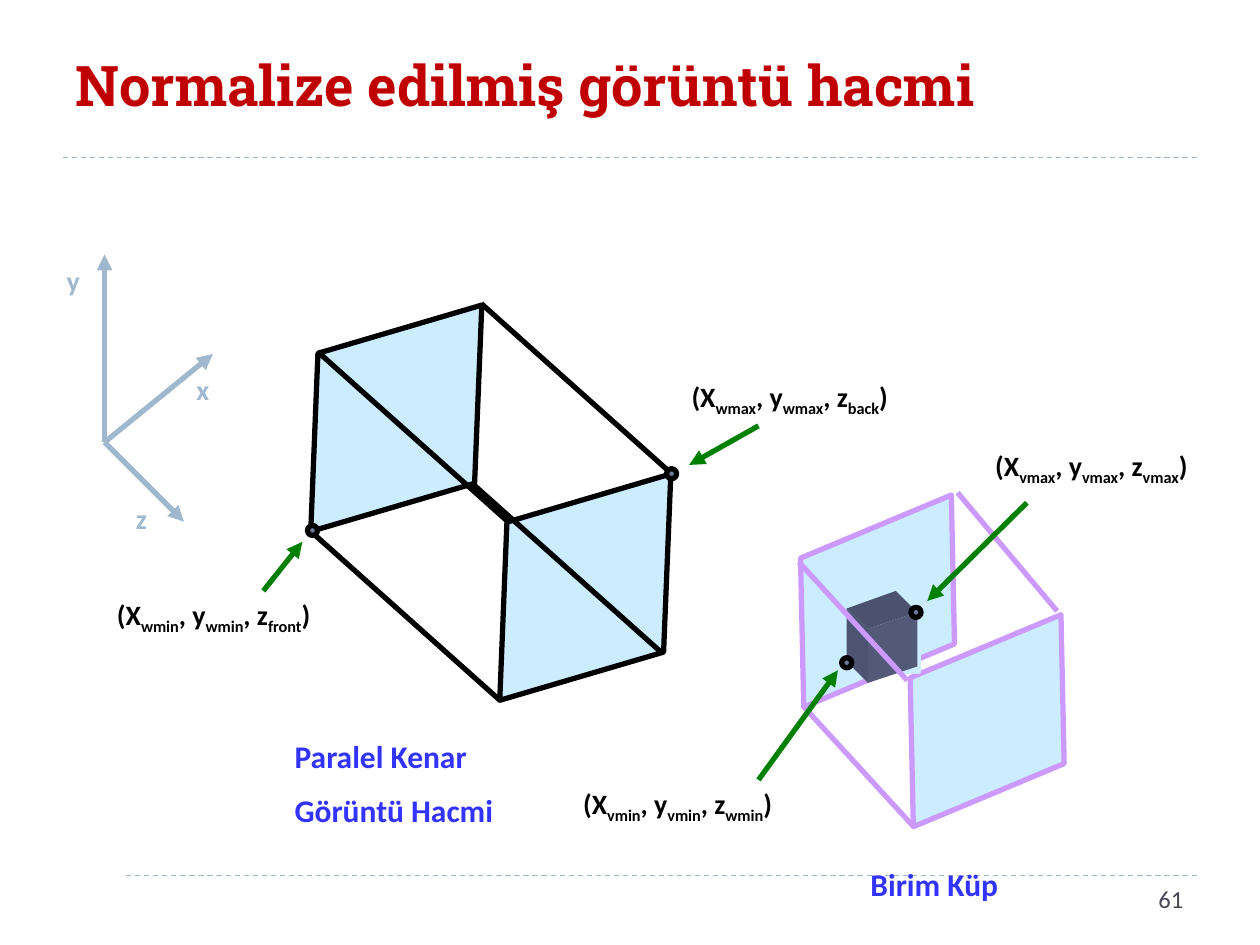
from pptx import Presentation
from pptx.dml.color import RGBColor
from pptx.enum.dml import MSO_LINE
from pptx.enum.shapes import MSO_CONNECTOR, MSO_SHAPE
from pptx.enum.text import MSO_ANCHOR, MSO_AUTO_SIZE, PP_ALIGN
from pptx.oxml.ns import qn
from pptx.util import Inches, Pt
from lxml.etree import SubElement

TITLE = "Normalize edilmiş görüntü hacmi"
STEEL, BLACK, GREEN, LILAC = "9FB8CD", "000000", "008000", "CC99FF"
SKY, SLATE, BLUE, WHITE = "CCECFF", "727CA3", "3333FF", "FFFFFF"

ROOT = (0.83, 3.51)
AXES = [
    ("y", (0.83, 2.02), (0.43, 2.04)),
    ("z", (1.46, 4.14), (0.98, 3.93)),
    ("x", (1.69, 2.81), (1.46, 2.91)),
]
POINTS = [
    ("(X_wmin_, y_wmin_, z_front_)", (0.83, 4.69), (2.09, 4.69), (2.4, 4.3), (2.48, 4.21)),
    ("(X_wmax_, y_wmax_, z_back_)", (5.39, 2.96), (6.02, 3.38), (5.47, 3.69), (5.33, 3.76)),
    ("(X_vmin_, y_vmin_, z_wmin_)", (4.53, 6.19), (6.02, 6.19), (6.65, 5.32), (6.72, 5.26)),
    ("(X_vmax_, y_vmax_, z_vmax_)", (7.8, 3.51), (8.15, 3.99), (7.36, 4.77), (7.27, 4.86)),
]
NAMES = [
    (["Birim Küp"], (6.81, 6.82, 1.42, 0.4)),
    (["Paralel Kenar", "Görüntü Hacmi"], (2.24, 5.8, 2.36, 0.85)),
]
BIG = [(3.74, 3.99), (2.24, 2.65)]
SMALL = [(6.1, 4.22), (6.97, 5.17)]
SHIFT = (1.5, 1.34)
EDGES = [(2.52, 2.79), (3.82, 2.41), (3.74, 3.83), (2.47, 4.22)]
BACK = [((7.6, 3.91), (8.39, 4.85)), ((6.38, 5.61), (7.25, 6.56))]
NEAR = ((6.34, 4.46), (7.2, 5.4))
CUBE = [
    ("4A526F", [(6.72, 4.83), (7.11, 4.69), (7.28, 4.86), (6.89, 4.99)]),
    ("4C5472", [(6.72, 4.83), (6.89, 4.99), (6.89, 5.42), (6.72, 5.25)]),
    ("525A78", [(6.89, 4.99), (7.28, 4.86), (7.28, 5.29), (6.89, 5.42)]),
]

deck = Presentation()
deck.slide_width, deck.slide_height = Inches(10), Inches(7.5)
slide = deck.slides.add_slide(deck.slide_layouts[5])
shapes = slide.shapes


def color(code):
    return RGBColor.from_string(code)


def paint(shape, fill, edge=None):
    shape.shadow.inherit = False
    shape.fill.solid()
    shape.fill.fore_color.rgb = color(fill)
    if edge:
        shape.line.color.rgb = color(edge)
        shape.line.width = Pt(3)
    else:
        shape.line.fill.background()
    return shape


def block(kind, box, fill, edge=None):
    return paint(shapes.add_shape(kind, *map(Inches, box)), fill, edge)


def line(start, end, code, width=3, arrow=False, dash=False):
    rule = shapes.add_connector(MSO_CONNECTOR.STRAIGHT, *map(Inches, start + end))
    rule.line.color.rgb = color(code)
    rule.line.width = Pt(width)
    if dash:
        rule.line.dash_style = MSO_LINE.DASH
    if arrow:
        SubElement(rule.line._get_or_add_ln(), qn("a:tailEnd"), type="triangle")
    SubElement(rule._element.spPr, qn("a:effectLst"))


def style(para, size, code, bold=True, name="Calibri"):
    font = para.font
    font.name, font.size, font.bold = name, Pt(size), bold
    font.color.rgb = color(code)


def text(rows, box, size, code):
    frame = shapes.add_textbox(*map(Inches, box)).text_frame
    frame.word_wrap = True
    for n, row in enumerate(rows):
        para = frame.add_paragraph() if n else frame.paragraphs[0]
        if n:
            para.space_before = Pt(size / 2)
        style(para, size, code)
        for i, part in enumerate(row.split("_")):
            run = para.add_run()
            run.text = part
            if i % 2:
                run._r.get_or_add_rPr().set("baseline", "-25000")


def faces(spots, size, turn, slant, edge):
    for spot in spots:
        face = block(MSO_SHAPE.PARALLELOGRAM, spot + size, SKY, edge)
        face.adjustments[0] = slant
        face.rotation = turn


for y in (6.95, 1.25):
    line((0.5, y), (9.5, y), STEEL, 0.75, dash=True)
block(MSO_SHAPE.RECTANGLE, (0.35, 6.82, 0.63, 0.63), WHITE)
page = block(MSO_SHAPE.RECTANGLE, (7.15, 6.97, 2.34, 0.4), WHITE).text_frame
page.text = "61"
page.vertical_anchor = MSO_ANCHOR.TOP
page.paragraphs[0].alignment = PP_ALIGN.RIGHT
style(page.paragraphs[0], 14, "464653", False)

title = shapes.title
title.left, title.top, title.width, title.height = map(Inches, (0.5, 0.13, 9, 1.08))
head = title.text_frame
head.text = TITLE
head.auto_size = MSO_AUTO_SIZE.NONE
head.vertical_anchor = MSO_ANCHOR.MIDDLE
head.paragraphs[0].alignment = PP_ALIGN.LEFT
style(head.paragraphs[0], 32, "C00000", name="Roboto Slab")

for name, tip, spot in AXES:
    line(ROOT, tip, STEEL, arrow=True)
    text([name], spot + (0.6, 0.37), 16, STEEL)

faces(BIG, (1.81, 1.34), 343.6, 0.339, BLACK)
for x, y in EDGES:
    line((x, y), (x + SHIFT[0], y + SHIFT[1]), BLACK)

faces(SMALL, (1.73, 1.1), 337.3, 0.393, LILAC)
block(MSO_SHAPE.RECTANGLE, (7.05, 5.17, 0.24, 0.16), SKY, SKY)
for start, end in BACK:
    line(start, end, LILAC)
for code, spots in CUBE:
    first, *rest = [(Inches(x), Inches(y)) for x, y in spots]
    pen = shapes.build_freeform(*first)
    pen.add_line_segments(rest)
    paint(pen.convert_to_shape(), code)
line(*NEAR, LILAC)

for label, spot, start, end, (x, y) in POINTS:
    text([label], spot + (2.2, 0.37), 16, BLACK)
    block(MSO_SHAPE.OVAL, (x - 0.04, y - 0.04, 0.08, 0.08), SLATE, BLACK)
    line(start, end, GREEN, arrow=True)
for rows, box in NAMES:
    text(rows, box, 18, BLUE)

deck.save("out.pptx")
